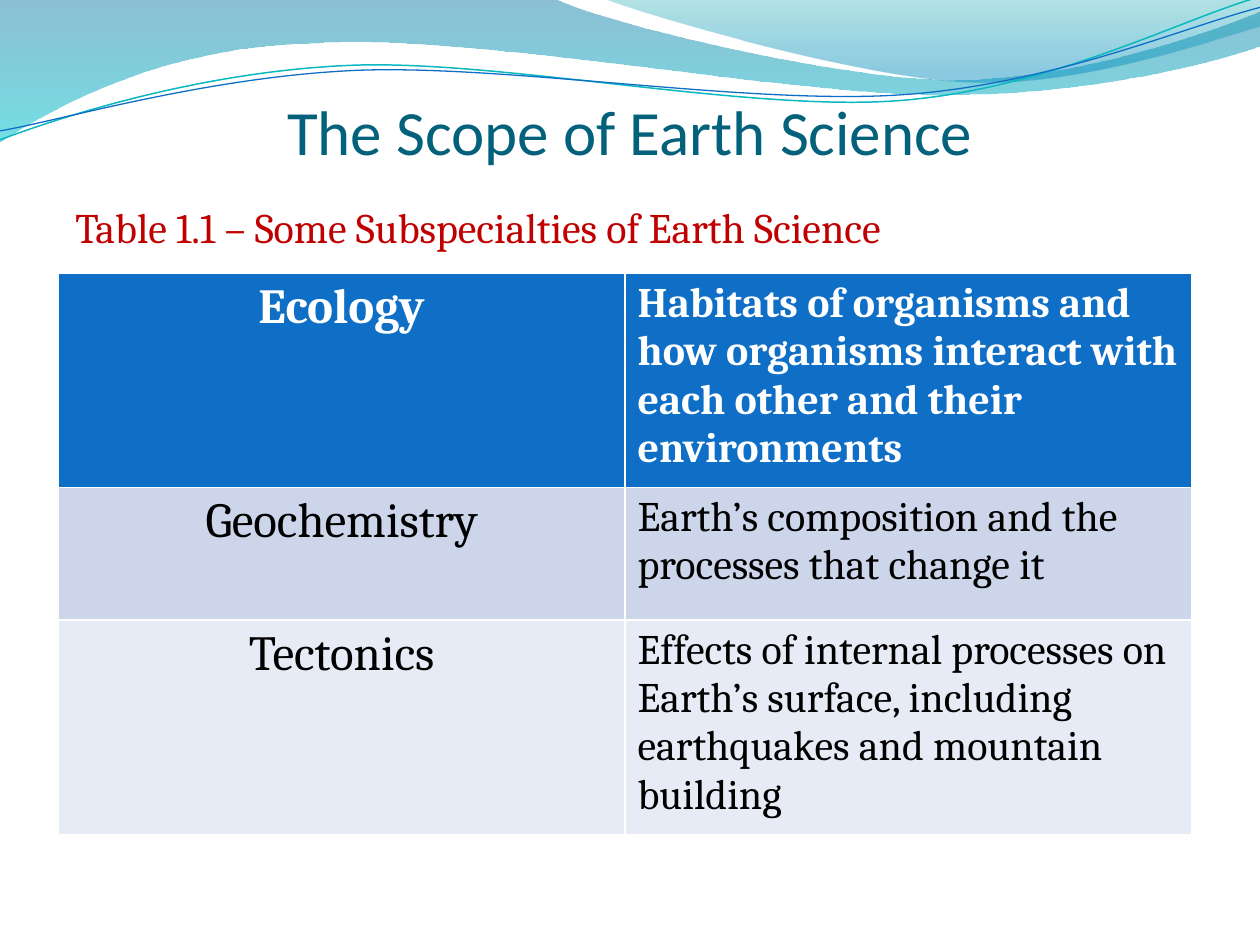
from dataclasses import dataclass
from math import cos, radians, sin

from lxml.etree import SubElement
from pptx import Presentation
from pptx.dml.color import RGBColor
from pptx.enum.text import MSO_ANCHOR, PP_ALIGN
from pptx.oxml.ns import qn
from pptx.util import Cm, Pt


@dataclass(frozen=True)
class Theme:
    title_font: str = "Calibri"
    body_font: str = "Cambria"
    title_size: int = 36
    term_size: int = 28
    body_size: int = 24
    title: str = "04617B"
    caption: str = "C00000"
    header: str = "0F6FC6"
    bands: tuple = ("CCD5EA", "E7EBF5")
    white: str = "FFFFFF"
    black: str = "000000"
    teal_line: str = "0AB8BF"


@dataclass(frozen=True)
class Stop:
    position: float
    color: str
    opacity: int  # percent


@dataclass(frozen=True)
class Wave:
    """Outline in centimetres: a pair is a line end, six numbers are a Bézier curve."""
    box: tuple  # left, top, width, height
    start: tuple
    segments: tuple
    stops: tuple = ()
    line_color: str = ""
    line_width: float = 0
    rotation: float = 0


@dataclass(frozen=True)
class TextStyle:
    font: str
    size: int
    color: str
    bold: bool = False
    alignment: PP_ALIGN = PP_ALIGN.LEFT


THEME = Theme()

WAVES = (
    Wave((-0.03, -0.03, 25.46, 2.9), (0, 0),
         ((11.18, -0.03), (12.09, 0.43, 16.87, 1.6, 19.25, 1.6),
          (21.67, 1.6, 24.33, 0.66, 25.4, 0.23), (25.43, 0.91),
          (24.97, 1.12, 22.1, 1.93, 18.95, 1.91),
          (15.8, 1.91, 9.7, 0.71, 6.53, 0.86),
          (3.28, 0.91, 1.17, 2.11, -0.03, 2.87), (0, 0)),
         stops=(Stop(0, "0074A1", 45), Stop(1, "00C6CF", 55))),
    Wave((12.17, -0.03, 23.23 - 10, 1.78), (12.17, -0.03),
         ((12.93, 0.28, 17.32, 1.57, 19.53, 1.65),
          (21.74, 1.75, 24.41, 0.81, 25.4, 0.53), (25.4, 0), (12.17, -0.03)),
         stops=(Stop(0, "00A1A9", 30), Stop(0.8, "008BBF", 45))),
    Wave((-0.05, 0.56, 25.45, 1.8), (0, 2.82),
         ((1.22, 2.36, 4.01, 1.45, 7.04, 1.32),
          (10.03, 1.19, 15.06, 2.26, 18.11, 2.03),
          (21.16, 1.8, 23.83, 0.38, 25.35, -0.05)),
         line_color=THEME.teal_line, line_width=0.85, rotation=357.3),
    Wave((-0.05, 0.76, 25.48, 1.47), (0, 2.64),
         ((1.19, 2.44, 4.17, 1.55, 7.19, 1.42),
          (10.24, 1.3, 15.16, 2.13, 18.21, 1.91),
          (21.23, 1.7, 23.9, 0.53, 25.4, 0.15)),
         line_color=THEME.header, line_width=0.75, rotation=357.3),
)

SUBSPECIALTIES = (
    ("Ecology", "Habitats of organisms and how organisms interact with "
                "each other and their environments"),
    ("Geochemistry", "Earth’s composition and the processes that change it"),
    ("Tectonics", "Effects of internal processes on Earth’s surface, "
                  "including earthquakes and mountain building"),
)
ROW_HEIGHTS = (3.73, 2.67, 3.73)


def local_point(wave: Wave, x: float, y: float) -> tuple:
    """Turn a slide point into a point within the unrotated box of the wave."""
    left, top, width, height = wave.box
    angle = radians(-wave.rotation)
    across, down = x - left - width / 2, y - top - height / 2
    return (Cm(across * cos(angle) - down * sin(angle) + width / 2),
            Cm(across * sin(angle) + down * cos(angle) + height / 2))


def add_curves(shape, wave: Wave) -> None:
    """Give the shape an outline of lines and true Bézier curves."""
    outline = shape._element.xpath(".//a:path")[0]
    for child in list(outline):
        outline.remove(child)
    shape.left, shape.top, shape.width, shape.height = (Cm(length) for length in wave.box)
    outline.set("w", str(shape.width))
    outline.set("h", str(shape.height))
    commands = [("a:moveTo", wave.start)]
    commands += [("a:lnTo" if len(segment) == 2 else "a:cubicBezTo", segment)
                 for segment in wave.segments]
    for tag, numbers in commands:
        command = SubElement(outline, qn(tag))
        for x, y in zip(numbers[::2], numbers[1::2]):
            local_x, local_y = local_point(wave, x, y)
            SubElement(command, qn("a:pt"), x=str(local_x), y=str(local_y))
    if wave.stops:
        SubElement(outline, qn("a:close"))


def draw_wave(slide, wave: Wave) -> None:
    builder = slide.shapes.build_freeform(Cm(wave.start[0]), Cm(wave.start[1]))
    builder.add_line_segments([(Cm(segment[-2]), Cm(segment[-1]))
                               for segment in wave.segments], close=False)
    shape = builder.convert_to_shape()
    add_curves(shape, wave)
    shape.rotation = wave.rotation
    shape.shadow.inherit = False
    if not wave.stops:
        shape.fill.background()
        shape.line.color.rgb = RGBColor.from_string(wave.line_color)
        shape.line.width = Pt(wave.line_width)
        return
    shape.line.fill.background()
    shape.fill.gradient()
    shape.fill.gradient_angle = 270
    for gradient_stop, stop in zip(shape.fill.gradient_stops, wave.stops):
        gradient_stop.position = stop.position
        gradient_stop.color.rgb = RGBColor.from_string(stop.color)
    for color, stop in zip(shape._element.xpath(".//a:gs/a:srgbClr"), wave.stops):
        SubElement(color, qn("a:alpha"), val=str(stop.opacity * 1000))


def write_text(text_frame, text: str, style: TextStyle) -> None:
    text_frame.word_wrap = True
    paragraph = text_frame.paragraphs[0]
    paragraph.text = text
    paragraph.alignment = style.alignment
    paragraph.font.name = style.font
    paragraph.font.size = Pt(style.size)
    paragraph.font.bold = style.bold
    paragraph.font.color.rgb = RGBColor.from_string(style.color)


def draw_table(slide) -> None:
    # The default table style supplies the white rules
    frame = slide.shapes.add_table(len(SUBSPECIALTIES), 2, Cm(1.17), Cm(5.51),
                                   Cm(22.86), Cm(11.3))
    table = frame.table
    for row_index, texts in enumerate(SUBSPECIALTIES):
        table.rows[row_index].height = Cm(ROW_HEIGHTS[row_index])
        is_header = row_index == 0
        fill_color = THEME.header if is_header else THEME.bands[row_index - 1]
        text_color = THEME.white if is_header else THEME.black
        styles = (
            TextStyle(THEME.body_font, THEME.term_size, text_color, is_header, PP_ALIGN.CENTER),
            TextStyle(THEME.body_font, THEME.body_size, text_color, is_header),
        )
        for column_index, (text, style) in enumerate(zip(texts, styles)):
            cell = table.cell(row_index, column_index)
            write_text(cell.text_frame, text, style)
            cell.fill.solid()
            cell.fill.fore_color.rgb = RGBColor.from_string(fill_color)
    frame.height = Cm(11.3)


def main() -> None:
    presentation = Presentation()
    presentation.slide_width, presentation.slide_height = Cm(25.4), Cm(19.05)
    slide = presentation.slides.add_slide(presentation.slide_layouts[6])

    # Decorative waves
    for wave in WAVES:
        draw_wave(slide, wave)

    # Title
    title = slide.shapes.add_textbox(Cm(1.27), Cm(1.96), Cm(22.86), Cm(1.42)).text_frame
    title.vertical_anchor = MSO_ANCHOR.BOTTOM
    title.margin_left = title.margin_right = title.margin_bottom = 0
    write_text(title, "The Scope of Earth Science",
               TextStyle(THEME.title_font, THEME.title_size, THEME.title,
                         alignment=PP_ALIGN.CENTER))

    # Table and its caption
    draw_table(slide)
    caption = slide.shapes.add_textbox(Cm(1.27), Cm(3.94), Cm(22.66), Cm(1.27)).text_frame
    write_text(caption, "Table 1.1 – Some Subspecialties of Earth Science",
               TextStyle(THEME.body_font, THEME.body_size, THEME.caption))

    presentation.save("out.pptx")


if __name__ == "__main__":
    main()
